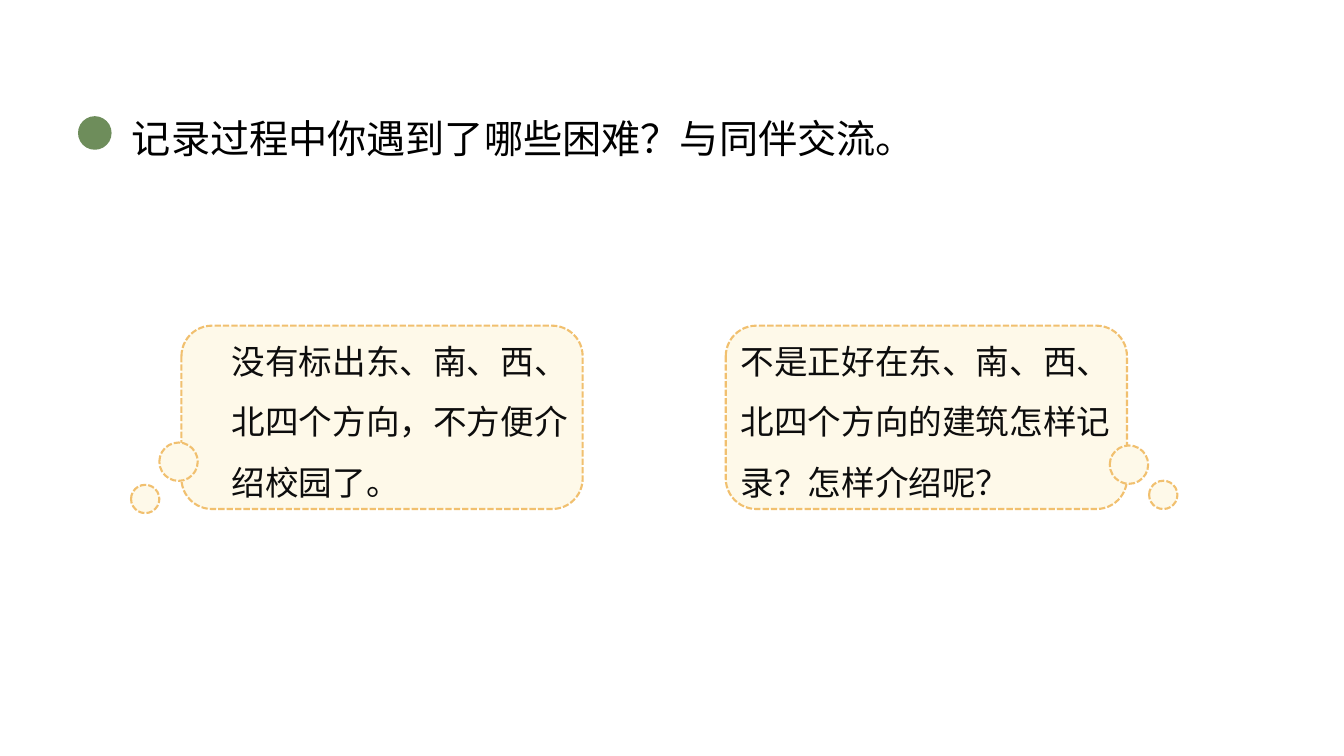
from lxml.etree import SubElement
from pptx import Presentation
from pptx.dml.color import RGBColor as RGB
from pptx.enum.dml import MSO_LINE_DASH_STYLE as Dash
from pptx.enum.shapes import MSO_SHAPE as Shape
from pptx.enum.text import MSO_AUTO_SIZE as AutoSize
from pptx.oxml.ns import qn
from pptx.util import Pt

# Content: each bubble has its left edge, its text frame (left, width)
# and the top left corners of the two thought circles
QUESTION = "记录过程中你遇到了哪些困难？与同伴交流。"
BUBBLES = [
    {"text": "没有标出东、南、西、北四个方向，不方便介绍校园了。",
     "left": 129.6, "frame": (158.4, 272.9),
     "circles": [(113.8, 316.1), (93.6, 346.3)]},
    {"text": "不是正好在东、南、西、北四个方向的建筑怎样记录？怎样介绍呢？",
     "left": 518.4, "frame": (522, 281.5),
     "circles": [(792.7, 318.2), (820.8, 343.4)]},
]

THEME = {
    "font": "Noto Sans CJK SC",
    "question_size": 28, "bubble_size": 24,
    "question_color": "000000", "bubble_color": "0D0D0D",
    "dot": "6E8D5B", "cream": "FEF9E9", "gold": "F1C06F",
}
BUBBLE_TOP, BUBBLE_WIDTH, BUBBLE_HEIGHT = 232.6, 286.6, 131
CIRCLE_SIZES = (27.4, 20.2)
TEXT_TOP, TEXT_HEIGHT = 225.4, 138.2


def add_figure(page, kind, left, top, width, height, fill, line, weight, dash=None):
    figure = page.shapes.add_shape(kind, Pt(left), Pt(top), Pt(width), Pt(height))
    figure.shadow.inherit = False
    figure.fill.solid()
    figure.fill.fore_color.rgb = RGB.from_string(fill)
    figure.line.color.rgb = RGB.from_string(line)
    figure.line.width = Pt(weight)
    if dash:
        figure.line.dash_style = dash


def add_text(page, text, left, top, width, height, size, color):
    box = page.shapes.add_textbox(Pt(left), Pt(top), Pt(width), Pt(height))
    frame = box.text_frame
    frame.word_wrap = True
    frame.auto_size = AutoSize.SHAPE_TO_FIT_TEXT
    frame.text = text
    para = frame.paragraphs[0]
    para.line_spacing = 1.5
    span = para.runs[0]
    span.font.size = Pt(size)
    span.font.color.rgb = RGB.from_string(color)
    span.font.name = THEME["font"]
    # East Asian typeface
    SubElement(span.font._element, qn("a:ea"), typeface=THEME["font"])


def add_bubble(page, bubble):
    parts = [(Shape.FLOWCHART_ALTERNATE_PROCESS, bubble["left"], BUBBLE_TOP,
              BUBBLE_WIDTH, BUBBLE_HEIGHT)]
    for (left, top), size in zip(bubble["circles"], CIRCLE_SIZES):
        parts.append((Shape.OVAL, left, top, size, size))
    for part in parts:
        add_figure(page, *part, THEME["cream"], THEME["gold"], 1.5, Dash.SQUARE_DOT)
    left, width = bubble["frame"]
    add_text(page, bubble["text"], left, TEXT_TOP, width, TEXT_HEIGHT,
             THEME["bubble_size"], THEME["bubble_color"])


def main():
    deck = Presentation()
    deck.slide_width, deck.slide_height = Pt(960), Pt(540)
    page = deck.slides.add_slide(deck.slide_layouts[6])

    # Question with its round marker
    add_figure(page, Shape.OVAL, 56.2, 83.5, 23, 23, THEME["dot"], THEME["dot"], 1)
    add_text(page, QUESTION, 87.1, 61.2, 793.4, 58.3,
             THEME["question_size"], THEME["question_color"])

    # Thought bubbles
    for bubble in BUBBLES:
        add_bubble(page, bubble)

    deck.save("out.pptx")


if __name__ == "__main__":
    main()
